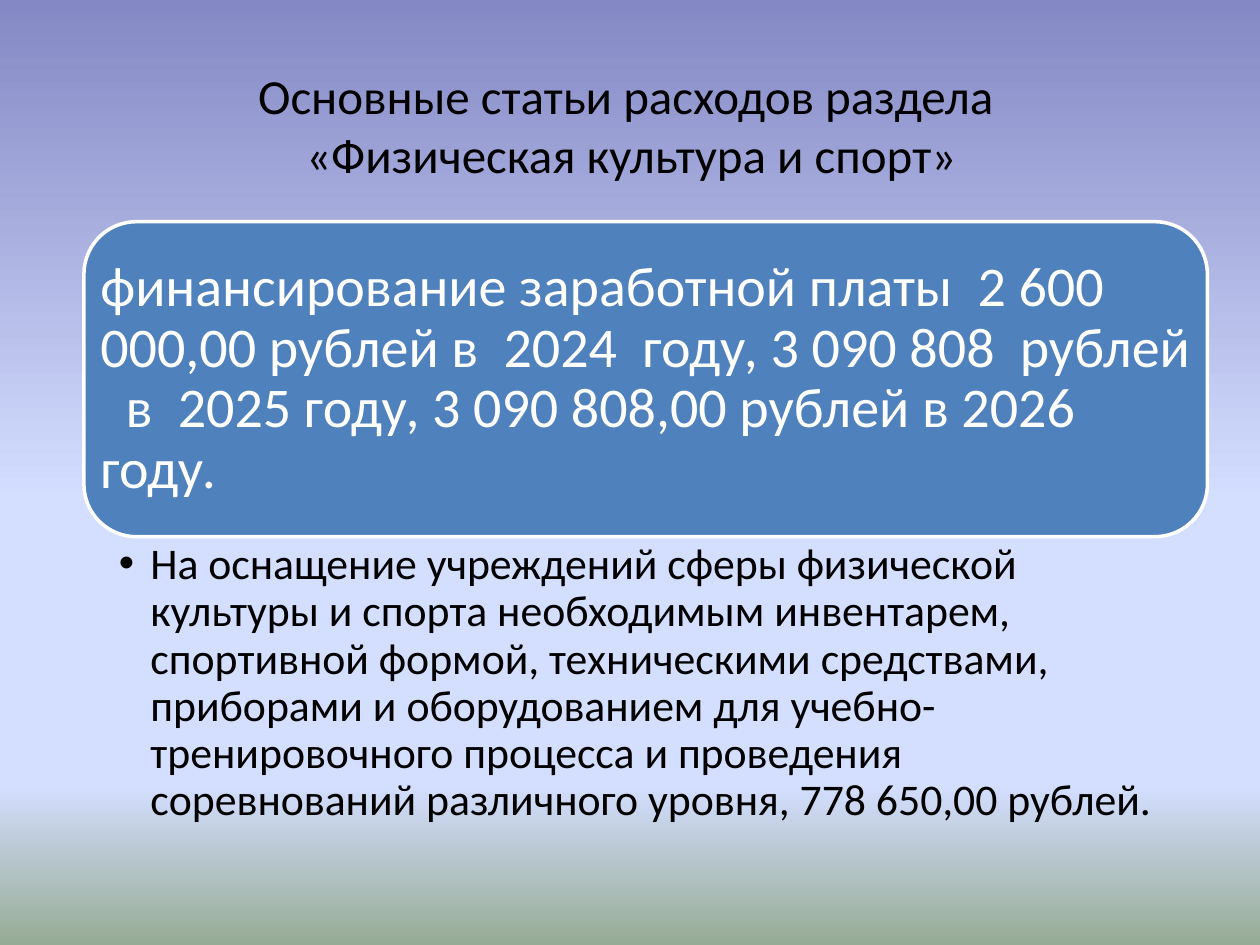
from dataclasses import dataclass

from lxml.etree import SubElement
from pptx import Presentation
from pptx.dml.color import RGBColor
from pptx.enum.shapes import MSO_SHAPE as Shape
from pptx.enum.text import MSO_ANCHOR as Anchor, PP_ALIGN as Align
from pptx.oxml.ns import qn
from pptx.util import Pt


@dataclass(frozen=True)
class Theme:
    font: str = "Calibri"
    ink: str = "000000"
    paper: str = "FFFFFF"
    card: str = "4F81BD"
    sky: tuple = ((0, "8488C4"), (53, "D4DEFF"), (83, "D4DEFF"), (100, "96AB94"))
    title_size: int = 28
    card_size: int = 32
    bullet_size: int = 25


class SlideBuilder:
    def __init__(self, page, theme):
        self.page = page
        self.theme = theme

    def background(self):
        fill = self.page.background.fill
        fill.gradient()
        fill.gradient_angle = 270
        stops = next(self.page.element.iter(qn("a:gsLst")))
        for stop in list(stops):
            stops.remove(stop)
        for percent, color in self.theme.sky:
            stop = SubElement(stops, qn("a:gs"), pos=str(percent * 1000))
            SubElement(stop, qn("a:srgbClr"), val=color)

    def set_text(self, box, text, size, color, insets, anchor, align=Align.LEFT, spacing=1.0):
        frame = box.text_frame
        frame.word_wrap = True
        frame.vertical_anchor = anchor
        frame.margin_left, frame.margin_top, frame.margin_right, frame.margin_bottom = map(Pt, insets)
        frame.text = text
        para = frame.paragraphs[0]
        para.alignment = align
        para.line_spacing = spacing
        for span in para.runs:
            span.font.name = self.theme.font
            span.font.size = Pt(size)
            span.font.color.rgb = RGBColor.from_string(color)
        return para

    def text_box(self, area):
        return self.page.shapes.add_textbox(*map(Pt, area))

    def title(self, area, text):
        self.set_text(self.text_box(area), text, self.theme.title_size, self.theme.ink,
                      (7.2, 3.6, 7.2, 3.6), Anchor.MIDDLE, Align.CENTER)

    def card(self, area, text):
        box = self.page.shapes.add_shape(Shape.ROUNDED_RECTANGLE, *map(Pt, area))
        box.shadow.inherit = False
        box.fill.solid()
        box.fill.fore_color.rgb = RGBColor.from_string(self.theme.card)
        box.line.color.rgb = RGBColor.from_string(self.theme.paper)
        box.line.width = Pt(2)
        self.set_text(box, text, self.theme.card_size, self.theme.paper,
                      (0.6, 0.6, 0.6, 0.6), Anchor.MIDDLE, spacing=0.9)

    def bullet(self, area, text):
        para = self.set_text(self.text_box(area), text, self.theme.bullet_size, self.theme.ink,
                             (20, 3, 18, 3), Anchor.TOP, spacing=0.9)
        indent = Pt(18)
        properties = para._p.get_or_add_pPr()
        properties.set("marL", str(indent))
        properties.set("indent", str(-indent))
        SubElement(properties, qn("a:buFont"), typeface="Arial")
        SubElement(properties, qn("a:buChar"), char="•")


def main():
    deck = Presentation()
    deck.slide_width, deck.slide_height = Pt(720), Pt(540)
    page = deck.slides.add_slide(deck.slide_layouts[6])
    builder = SlideBuilder(page, Theme())

    left, top, width, card_height = 48, 126.7, 642, 180
    builder.background()
    builder.title((36.7, 26, 648, 90),
                  "Основные статьи расходов раздела \v«Физическая культура и спорт»")
    builder.card((left, top, width, card_height),
                 "финансирование заработной платы  2 600 000,00 рублей в  2024  году, "
                 "3 090 808  рублей   в  2025 году, 3 090 808,00 рублей в 2026 году.")
    builder.bullet((left, top + card_height, width, 172),
                   "На оснащение учреждений сферы физической культуры и спорта необходимым "
                   "инвентарем, спортивной формой, техническими средствами, приборами и "
                   "оборудованием для учебно-тренировочного процесса и проведения "
                   "соревнований различного уровня, 778 650,00 рублей.")
    deck.save("out.pptx")


if __name__ == "__main__":
    main()
